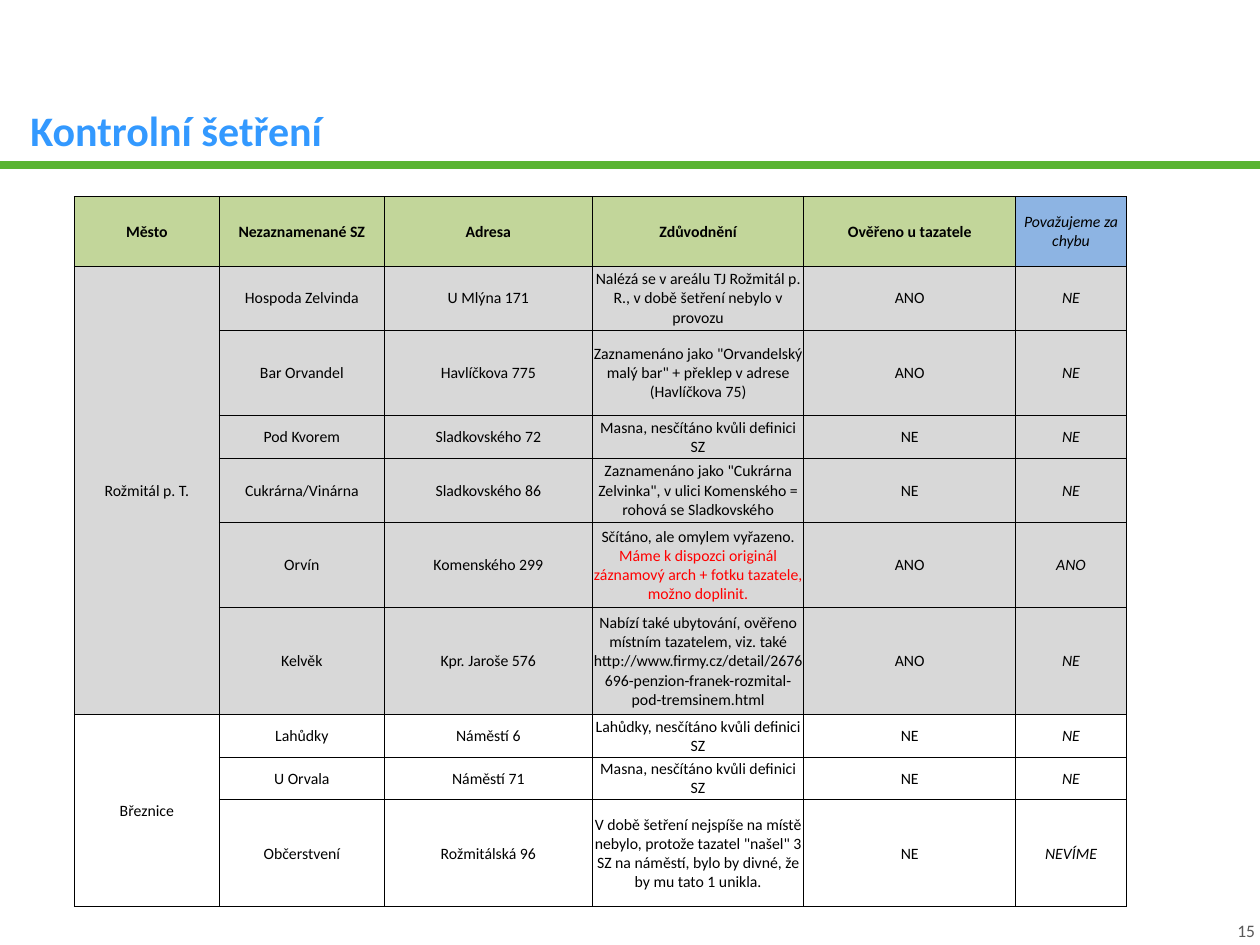
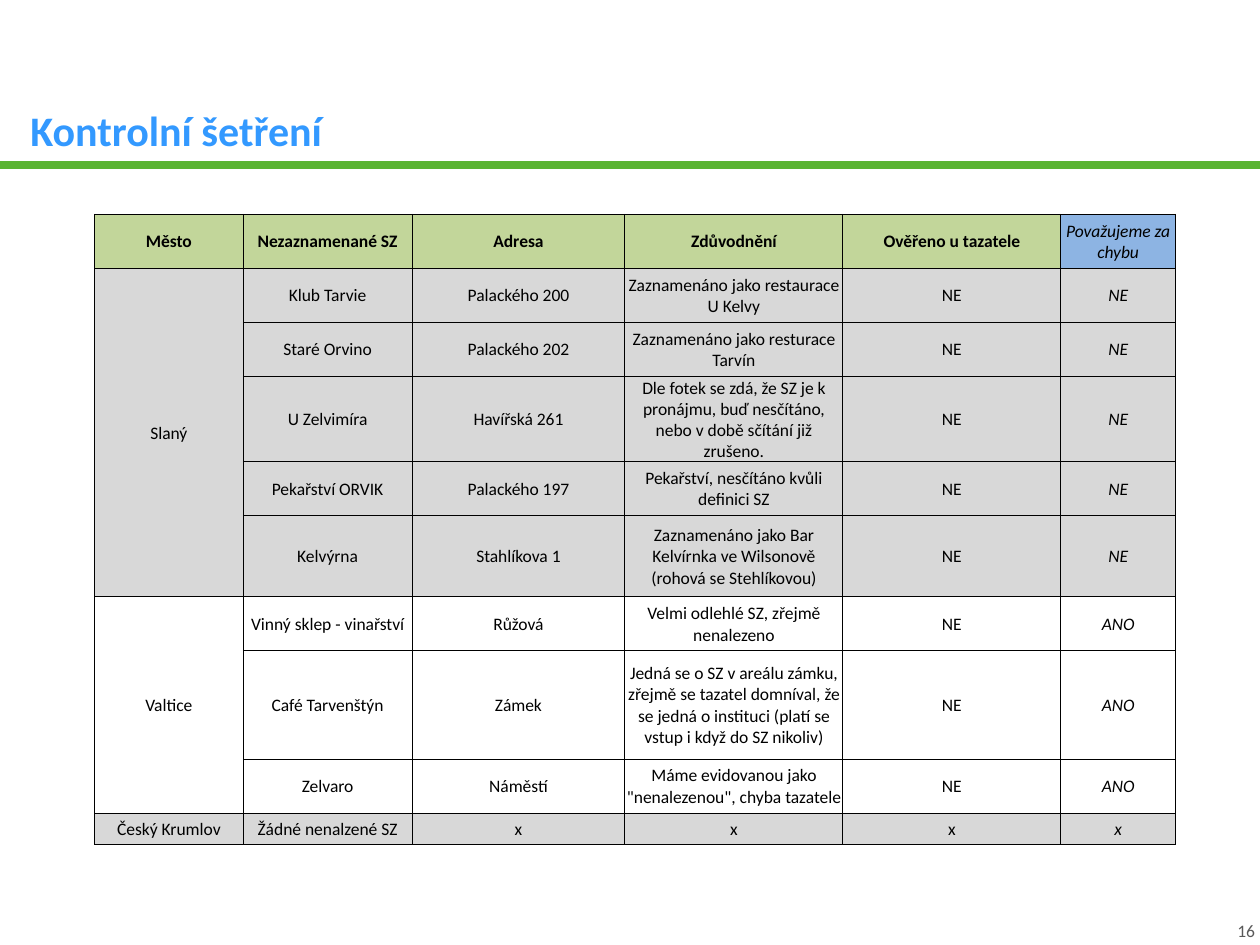
from lxml.etree import SubElement
from pptx import Presentation
from pptx.dml.color import RGBColor
from pptx.enum.shapes import MSO_CONNECTOR
from pptx.enum.text import MSO_ANCHOR, PP_ALIGN
from pptx.oxml import parse_xml
from pptx.oxml.ns import nsdecls, qn
from pptx.util import Inches, Pt

BLACK, RED, GREEN, BLUE = "000000", "FF0000", "5AB432", "3399FF"
HEAD, HEAD_ERROR, GREY, WHITE, NUMBER = "C2D69A", "8DB4E3", "D8D8D8", "FFFFFF", "595959"
HEADERS = ["Město", "Nezaznamenané SZ", "Adresa", "Zdůvodnění", "Ověřeno u tazatele", "Považujeme za chybu"]

pages = [
    {
        "number": "15", "left": 5.9, "top": 20.8, "size": 9, "line": 2.26,
        "cols": [11.5, 13.1, 16.5, 16.8, 16.8, 8.8],
        "lines": [3.25, 3, 4, 2, 3, 4, 5, 2, 2, 5],
        "towns": [
            ("Rožmitál p. T.", GREY, [
                ("Hospoda Zelvinda", "U Mlýna 171", "Nalézá se v areálu TJ Rožmitál p. R., v době šetření nebylo v provozu", "ANO", "NE"),
                ("Bar Orvandel", "Havlíčkova 775", 'Zaznamenáno jako "Orvandelský malý bar" + překlep v adrese (Havlíčkova 75)', "ANO", "NE"),
                ("Pod Kvorem", "Sladkovského 72", "Masna, nesčítáno kvůli definici SZ", "NE", "NE"),
                ("Cukrárna/Vinárna", "Sladkovského 86", 'Zaznamenáno jako "Cukrárna Zelvinka", v ulici Komenského = rohová se Sladkovského', "NE", "NE"),
                ("Orvín", "Komenského 299", "Sčítáno, ale omylem vyřazeno. |Máme k dispozci originál záznamový arch + fotku tazatele, možno doplinit.", "ANO", "ANO"),
                ("Kelvěk", "Kpr. Jaroše 576", "Nabízí také ubytování, ověřeno místním tazatelem, viz. také http://www.firmy.cz/detail/2676696-penzion-franek-rozmital-pod-tremsinem.html", "ANO", "NE"),
            ]),
            ("Březnice", WHITE, [
                ("Lahůdky", "Náměstí 6", "Lahůdky, nesčítáno kvůli definici SZ", "NE", "NE"),
                ("U Orvala", "Náměstí 71", "Masna, nesčítáno kvůli definici SZ", "NE", "NE"),
                ("Občerstvení", "Rožmitálská 96", 'V době šetření nejspíše na místě nebylo, protože tazatel "našel" 3 SZ na náměstí, bylo by divné, že by mu tato 1 unikla.', "NE", "NEVÍME"),
            ]),
        ],
    },
    {
        "number": "16", "left": 7.5, "top": 22.67, "size": 10, "line": 2.86,
        "cols": [11.8, 13.4, 16.9, 17.3, 17.3, 9.1],
        "lines": [2, 2, 2, 3, 2, 3, 2, 4, 2, 1.17],
        "towns": [
            ("Slaný", GREY, [
                ("Klub Tarvie", "Palackého 200", "Zaznamenáno jako restaurace U Kelvy", "NE", "NE"),
                ("Staré Orvino", "Palackého 202", "Zaznamenáno jako resturace Tarvín", "NE", "NE"),
                ("U Zelvimíra", "Havířská 261", "Dle fotek se zdá, že SZ je k pronájmu, buď nesčítáno, nebo v době sčítání již zrušeno.", "NE", "NE"),
                ("Pekařství ORVIK", "Palackého 197", "Pekařství, nesčítáno kvůli definici SZ", "NE", "NE"),
                ("Kelvýrna", "Stahlíkova 1", "Zaznamenáno jako Bar Kelvírnka ve Wilsonově (rohová se Stehlíkovou)", "NE", "NE"),
            ]),
            ("Valtice", WHITE, [
                ("Vinný sklep - vinařství", "Růžová", "Velmi odlehlé SZ, zřejmě nenalezeno", "NE", "ANO"),
                ("Café Tarvenštýn", "Zámek", "Jedná se o SZ v areálu zámku, zřejmě se tazatel domníval, že se jedná o instituci (platí se vstup i když do SZ nikoliv)", "NE", "ANO"),
                ("Zelvaro", "Náměstí", 'Máme evidovanou jako "nenalezenou", chyba tazatele', "NE", "ANO"),
            ]),
            ("Český Krumlov", GREY, [("Žádné nenalzené SZ", "x", "x", "x", "x")]),
        ],
    },
]


def rgb(value):
    return RGBColor.from_string(value)


def write(p, text, color, align, **font):
    p.alignment = align
    for part, part_color in zip(text.split("|"), (color, RED)):
        r = p.add_run()
        r.text = part
        r.font.color.rgb = rgb(part_color)
        for name, value in {"name": "Calibri", **font}.items():
            setattr(r.font, name, value)


prs = Presentation()
prs.slide_width, prs.slide_height = Inches(10), Inches(7.5)
W, H = prs.slide_width / 100, prs.slide_height / 100

for page in pages:
    s = prs.slides.add_slide(prs.slide_layouts[5])

    band = s.shapes.add_connector(MSO_CONNECTOR.STRAIGHT, 0, int(17.47 * H), prs.slide_width, int(17.47 * H))
    band.line.color.rgb = rgb(GREEN)
    band.line.width = Pt(4.75)
    SubElement(band._element.spPr, qn("a:effectLst"))

    title = s.shapes.title
    number = s.shapes.add_textbox(0, 0, 0, 0)
    boxes = [
        (title, (2, 5.87, 82.7, 10.53), MSO_ANCHOR.BOTTOM, 0.04),
        (number, (89, 97.33, 10.6, 2.27), MSO_ANCHOR.TOP, 0),
    ]
    for sp, (left, top, width, height), anchor, side in boxes:
        place = {"left": left * W, "top": top * H, "width": width * W, "height": height * H}
        for name, value in place.items():
            setattr(sp, name, int(value))
        frame = {"word_wrap": True, "vertical_anchor": anchor, "margin_left": Inches(side),
                 "margin_right": Inches(side), "margin_top": 0, "margin_bottom": 0}
        for name, value in frame.items():
            setattr(sp.text_frame, name, value)
    write(title.text_frame.paragraphs[0], "Kontrolní šetření", BLUE, PP_ALIGN.LEFT, size=Pt(24), bold=True)
    write(number.text_frame.paragraphs[0], page["number"], NUMBER, PP_ALIGN.RIGHT, size=Pt(10))

    rows = [(HEADERS, HEAD)]
    merges = []
    for town, fill, places in page["towns"]:
        merges.append((len(rows), len(rows) + len(places) - 1))
        for i, entry in enumerate(places):
            rows.append(([town if i == 0 else "", *entry], fill))

    frame = s.shapes.add_table(
        len(rows), len(HEADERS), int(page["left"] * W), int(page["top"] * H),
        int(sum(page["cols"]) * W), int(sum(page["lines"]) * page["line"] * H))
    tbl = frame.table
    for col, width in zip(tbl.columns, page["cols"]):
        col.width = int(width * W)
    for row, lines in zip(tbl.rows, page["lines"]):
        row.height = int(lines * page["line"] * H)

    for i, (texts, fill) in enumerate(rows):
        for j, text in enumerate(texts):
            cell = tbl.cell(i, j)
            last = j == len(HEADERS) - 1
            layout = {"vertical_anchor": MSO_ANCHOR.MIDDLE, "margin_left": Inches(0.01),
                      "margin_right": Inches(0.01), "margin_top": Inches(0.01), "margin_bottom": 0}
            for name, value in layout.items():
                setattr(cell, name, value)
            cell.fill.solid()
            cell.fill.fore_color.rgb = rgb(HEAD_ERROR if last and i == 0 else fill)
            for k, side in enumerate(("lnL", "lnR", "lnT", "lnB")):
                cell._tc.tcPr.insert(k, parse_xml(
                    f'<a:{side} {nsdecls("a")} w="{Pt(0.5)}"><a:solidFill>'
                    f'<a:srgbClr val="{BLACK}"/></a:solidFill></a:{side}>'))
            p = cell.text_frame.paragraphs[0]
            p.font.size = Pt(page["size"])
            if text:
                write(p, text, BLACK, PP_ALIGN.CENTER, size=Pt(page["size"]),
                      bold=i == 0 and not last, italic=last)

    for first, end in merges:
        if end > first:
            tbl.cell(first, 0).merge(tbl.cell(end, 0))

prs.save("out.pptx")
